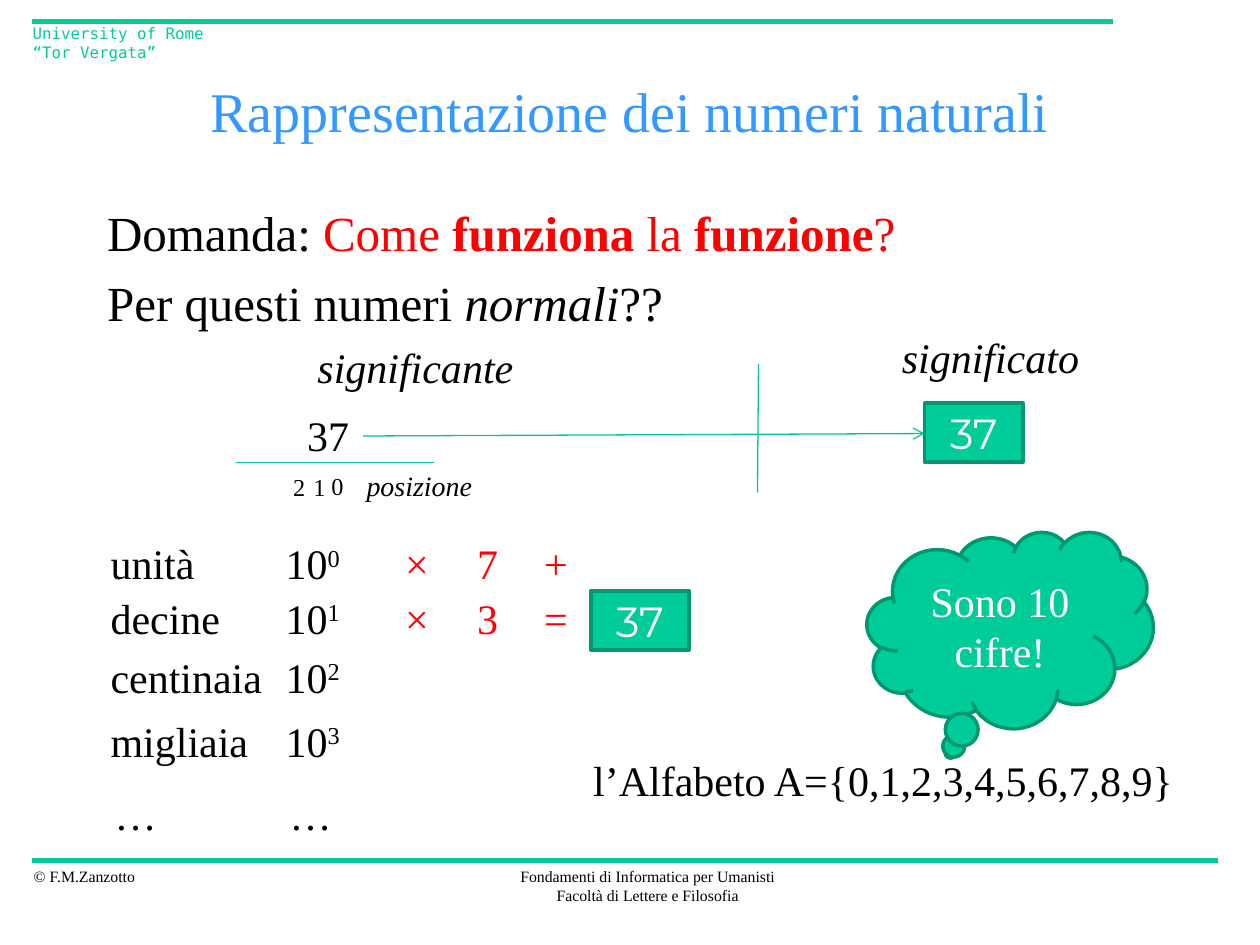
"""Build the slide on how natural numbers are represented."""
from lxml.etree import SubElement
from pptx import Presentation
from pptx.dml.color import RGBColor
from pptx.enum.shapes import MSO_CONNECTOR, MSO_SHAPE
from pptx.enum.text import MSO_ANCHOR, MSO_AUTO_SIZE, PP_ALIGN
from pptx.oxml.ns import qn
from pptx.util import Cm, Pt

SERIF, MONO, SANS = "Times New Roman", "DejaVu Sans Mono", "Montserrat"
BLACK, WHITE, RED, BLUE = "000000", "FFFFFF", "FF0000", "3399FF"
GREEN, DARK_GREEN, LINE_GREEN = "00CC99", "009771", "00C896"

LINES = [
    (0.64, 17.35, 24.56, 17.35, GREEN, 3, False),
    (0.64, 0.43, 22.43, 0.43, GREEN, 3, False),
    (15.29, 7.34, 15.27, 9.93, LINE_GREEN, 0.75, False),
    (7.32, 8.79, 18.64, 8.74, LINE_GREEN, 0.75, True),
    (4.75, 9.32, 8.74, 9.32, LINE_GREEN, 0.75, False),
]

TITLE = "Rappresentazione dei numeri naturali"
BODY = [
    [("Domanda: ", {}), ("Come ", {"color": RED}),
     ("funziona ", {"color": RED, "bold": True}), ("la ", {"color": RED}),
     ("funzione", {"color": RED, "bold": True}), ("?", {"color": RED})],
    [("Per questi numeri ", {}), ("normali", {"italic": True}), ("??", {})],
]

FOOTERS = [
    (0.43, 17.35, 2.59, 0.64, ["© F.M.Zanzotto"], SERIF, BLACK, PP_ALIGN.LEFT),
    (10.21, 17.35, 5.69, 1.02,
     ["Fondamenti di Informatica per Umanisti", "Facoltà di Lettere e Filosofia"],
     SERIF, BLACK, PP_ALIGN.CENTER),
    (0.41, 0.36, 3.96, 1.02, ["University of Rome", "“Tor Vergata”"],
     MONO, GREEN, PP_ALIGN.LEFT),
]

LABELS = [
    (5.94, 8.13, 1.37, "37", {}),
    (6.15, 6.76, 4.5, "significante", {"italic": True}),
    (17.93, 6.55, 4.11, "significato", {"italic": True}),
    (6.43, 9.27, 0.79, "0", {"raised": True}),
    (6.07, 9.3, 0.79, "1", {"raised": True}),
    (5.66, 9.3, 0.79, "2", {"raised": True}),
    (7.14, 9.32, 2.67, "posizione", {"italic": True, "size": 16}),
    (11.71, 15.09, 12.29, "l’Alfabeto A={0,1,2,3,4,5,6,7,8,9}", {}),
]

PLACES = [
    (10.72, "unità", 2.21, "0", "7", "+"),
    (11.81, "decine", 2.74, "1", "3", "="),
    (13.0, "centinaia", 3.58, "2", None, None),
    (14.3, "migliaia", 3.3, "3", None, None),
]
LABEL_X, POWER_X = 1.98, 5.51
TIMES_X, DIGIT_X, SIGN_X = 7.92, 9.37, 10.72
DOTS_Y, DOTS_SHIFT = 15.77, 0.08

SHAPES = [
    (MSO_SHAPE.RECTANGLE, 18.64, 8.13, 1.98, 1.19, "37", SANS),
    (MSO_SHAPE.RECTANGLE, 11.91, 11.91, 1.98, 1.19, "37", SANS),
    (MSO_SHAPE.CLOUD_CALLOUT, 17.48, 10.72, 5.77, 3.96, "Sono 10 cifre!", SERIF),
]


def rgb(color):
    return RGBColor.from_string(color)


def add_run(p, text, size=24, font=SERIF, color=BLACK, bold=False, italic=False, raised=False):
    r = p.add_run()
    r.text = text
    r.font.size, r.font.name = Pt(size), font
    r.font.bold, r.font.italic = bold, italic
    r.font.color.rgb = rgb(color)
    if raised:
        r.font._element.set("baseline", "30000")


def add_text(s, x, y, w, h, paragraphs, align=PP_ALIGN.LEFT, wrap=False):
    tf = s.shapes.add_textbox(Cm(x), Cm(y), Cm(w), Cm(h)).text_frame
    tf.word_wrap = wrap
    tf.auto_size = MSO_AUTO_SIZE.NONE if wrap else MSO_AUTO_SIZE.SHAPE_TO_FIT_TEXT
    for i, runs in enumerate(paragraphs):
        p = tf.add_paragraph() if i else tf.paragraphs[0]
        p.alignment = align
        for text, style in runs:
            add_run(p, text, **style)
    return tf


def add_label(s, x, y, w, *runs):
    add_text(s, x, y, w, 1.27, [runs])


def add_line(s, x1, y1, x2, y2, color, width, arrow):
    c = s.shapes.add_connector(MSO_CONNECTOR.STRAIGHT, Cm(x1), Cm(y1), Cm(x2), Cm(y2))
    c.line.color.rgb = rgb(color)
    c.line.width = Pt(width)
    if arrow:
        SubElement(c.line._get_or_add_ln(), qn("a:tailEnd"), type="arrow")
    SubElement(c._element.spPr, qn("a:effectLst"))


def add_filled(s, kind, x, y, w, h, text, font):
    sp = s.shapes.add_shape(kind, Cm(x), Cm(y), Cm(w), Cm(h))
    sp.shadow.inherit = False
    sp.fill.solid()
    sp.fill.fore_color.rgb = rgb(GREEN)
    sp.line.color.rgb = rgb(DARK_GREEN)
    sp.line.width = Pt(2)
    tf = sp.text_frame
    tf.word_wrap = True
    tf.vertical_anchor = MSO_ANCHOR.MIDDLE
    p = tf.paragraphs[0]
    p.alignment = PP_ALIGN.CENTER
    add_run(p, text, font=font, color=WHITE)


def add_places(s):
    red = {"color": RED}
    for y, name, width, power, digit, sign in PLACES:
        add_label(s, LABEL_X, y, width, (name, {}))
        add_label(s, POWER_X, y, 1.65, ("10", {}), (power, {"raised": True}))
        if digit:
            add_label(s, TIMES_X, y, 0.99, ("×", red))
            add_label(s, DIGIT_X, y, 0.94, (digit, red))
            add_label(s, SIGN_X, y, 0.99, (sign, red))
    for x in (LABEL_X, POWER_X):
        add_label(s, x + DOTS_SHIFT, DOTS_Y, 1.37, ("…", {}))


def main():
    prs = Presentation()
    prs.slide_width, prs.slide_height = Cm(25.4), Cm(19.05)
    s = prs.slides.add_slide(prs.slide_layouts[6])
    for line in LINES:
        add_line(s, *line)
    for x, y, w, h, rows, font, color, align in FOOTERS:
        style = {"size": 9, "font": font, "color": color}
        add_text(s, x, y, w, h, [[(row, style)] for row in rows], align)

    tf = add_text(s, 1.91, 1.27, 21.59, 1.91, [[(TITLE, {"size": 32, "color": BLUE})]],
                  PP_ALIGN.CENTER, wrap=True)
    tf.vertical_anchor = MSO_ANCHOR.MIDDLE
    body = [[(text, {"size": 28, **style}) for text, style in runs] for runs in BODY]
    tf = add_text(s, 1.91, 3.81, 21.59, 2.95, body, wrap=True)
    tf.margin_top = Cm(0.27)
    tf.paragraphs[1].space_before = Pt(6.5)

    for x, y, w, text, style in LABELS:
        add_label(s, x, y, w, (text, style))
    add_places(s)
    for shape in SHAPES:
        add_filled(s, *shape)
    prs.save("out.pptx")


if __name__ == "__main__":
    main()
